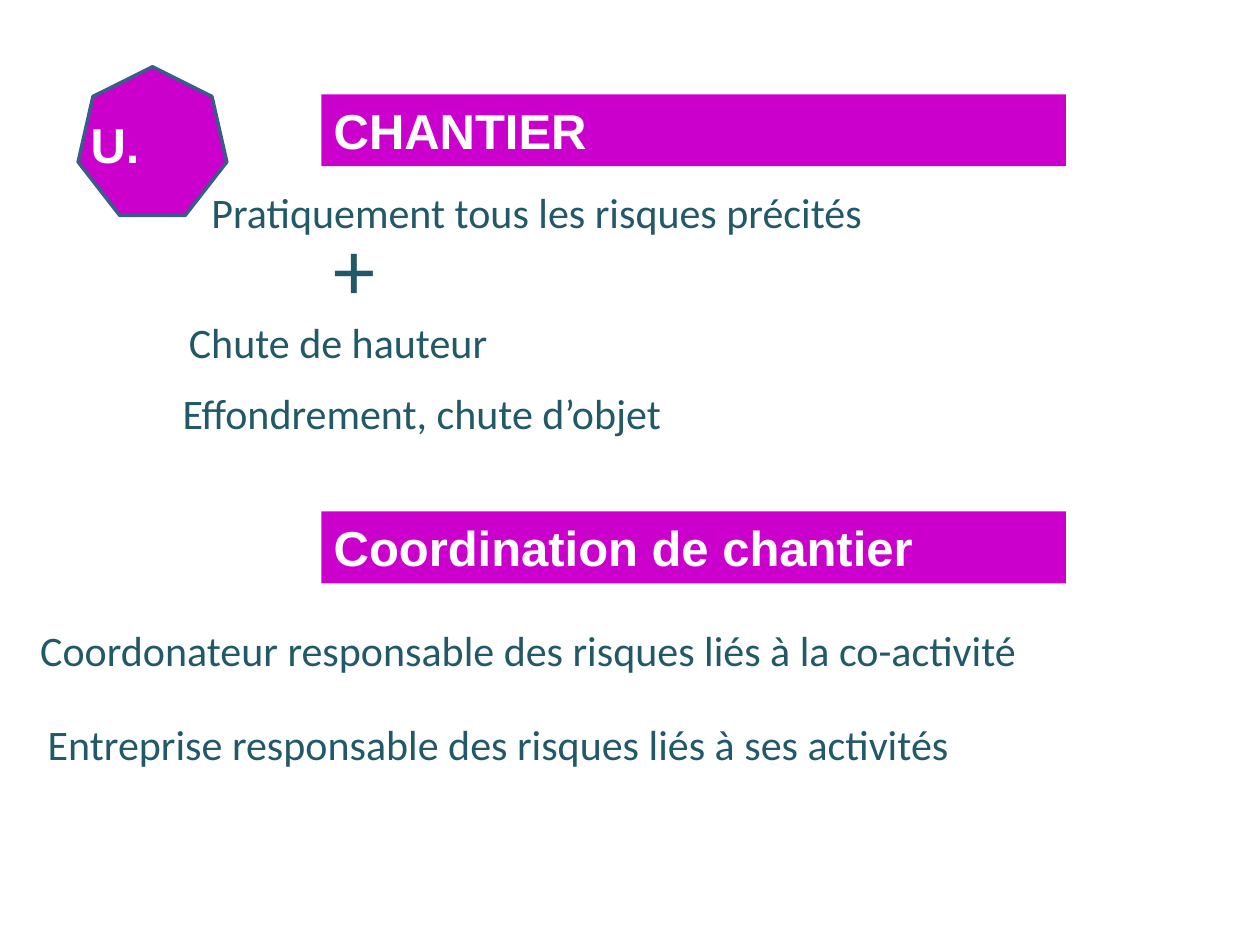
from pptx import Presentation
from pptx.dml.color import RGBColor
from pptx.enum.shapes import MSO_SHAPE
from pptx.enum.text import MSO_ANCHOR, PP_ALIGN
from pptx.util import Inches, Pt

COLORS = {"fill": "CC00CC", "edge": "385D8A", "white": "FFFFFF", "teal": "215968"}
HEAD = {"name": "Arial", "size": Pt(28), "bold": True}
BODY = {"name": "Calibri", "size": Pt(24)}
PLUS = {"name": "Calibri", "size": Pt(48)}

# Heptagon corners as shares of its box
CORNERS = [(0, 0.64), (0.1, 0.2), (0.5, 0), (0.9, 0.2),
           (1, 0.64), (0.72, 1), (0.28, 1)]


def color(key):
    return RGBColor.from_string(COLORS[key])


def write(shape, text, style, tint):
    frame = shape.text_frame
    frame.word_wrap = True
    frame.vertical_anchor = MSO_ANCHOR.TOP
    para = frame.paragraphs[0]
    para.alignment = PP_ALIGN.LEFT
    run = para.add_run()
    run.text = text
    for key, value in style.items():
        setattr(run.font, key, value)
    run.font.color.rgb = color(tint)


def paint(shape):
    shape.shadow.inherit = False
    shape.fill.solid()
    shape.fill.fore_color.rgb = color("fill")


def add_text(slide, box, text, style=BODY, tint="teal"):
    shape = slide.shapes.add_textbox(*map(Inches, box))
    write(shape, text, style, tint)


def add_badge(slide, box, text):
    left, top, width, height = box
    dots = [(Inches(left + x * width), Inches(top + y * height))
            for x, y in CORNERS]
    pen = slide.shapes.build_freeform(*dots[0])
    pen.add_line_segments(dots[1:], close=True)
    shape = pen.convert_to_shape()
    paint(shape)
    shape.line.color.rgb = color("edge")
    shape.line.width = Pt(2)
    # The letter sits on its own box over the badge
    add_text(slide, (left, top + 0.33, width, 0.57), text, HEAD, "white")


def add_banner(slide, box, text):
    shape = slide.shapes.add_shape(MSO_SHAPE.RECTANGLE, *map(Inches, box))
    paint(shape)
    shape.line.fill.background()
    write(shape, text, HEAD, "white")


def add_risks(slide, box):
    left, top, width, height = box
    add_banner(slide, (left, top, width, height), "CHANTIER")
    add_text(slide, (left - 0.97, top + 0.68, 7.85, 0.5),
             "Pratiquement tous les risques précités")
    add_text(slide, (left, top + 0.92, width, 0.91), "+", PLUS)
    add_text(slide, (left - 1.15, top + 1.71, 8.22, 0.51), "Chute de hauteur")
    add_text(slide, (left - 1.2, top + 2.28, 8.22, 0.51),
             "Effondrement, chute d’objet")


def add_duties(slide, box):
    left, top, width, height = box
    add_banner(slide, (left, top, width, height), "Coordination de chantier")
    add_text(slide, (left - 2.33, top + 0.85, 9.52, 0.51),
             "Coordonateur responsable des risques liés à la co-activité")
    add_text(slide, (left - 2.27, top + 1.59, 9.52, 0.51),
             "Entreprise responsable des risques liés à ses activités")


def main():
    deck = Presentation()
    deck.slide_width, deck.slide_height = Inches(10), Inches(7.5)
    slide = deck.slides.add_slide(deck.slide_layouts[6])
    add_badge(slide, (0.62, 0.53, 1.18, 1.18), "U.")
    add_risks(slide, (2.55, 0.75, 5.91, 0.57))
    add_duties(slide, (2.55, 4.06, 5.91, 0.57))
    deck.save("out.pptx")


if __name__ == "__main__":
    main()
